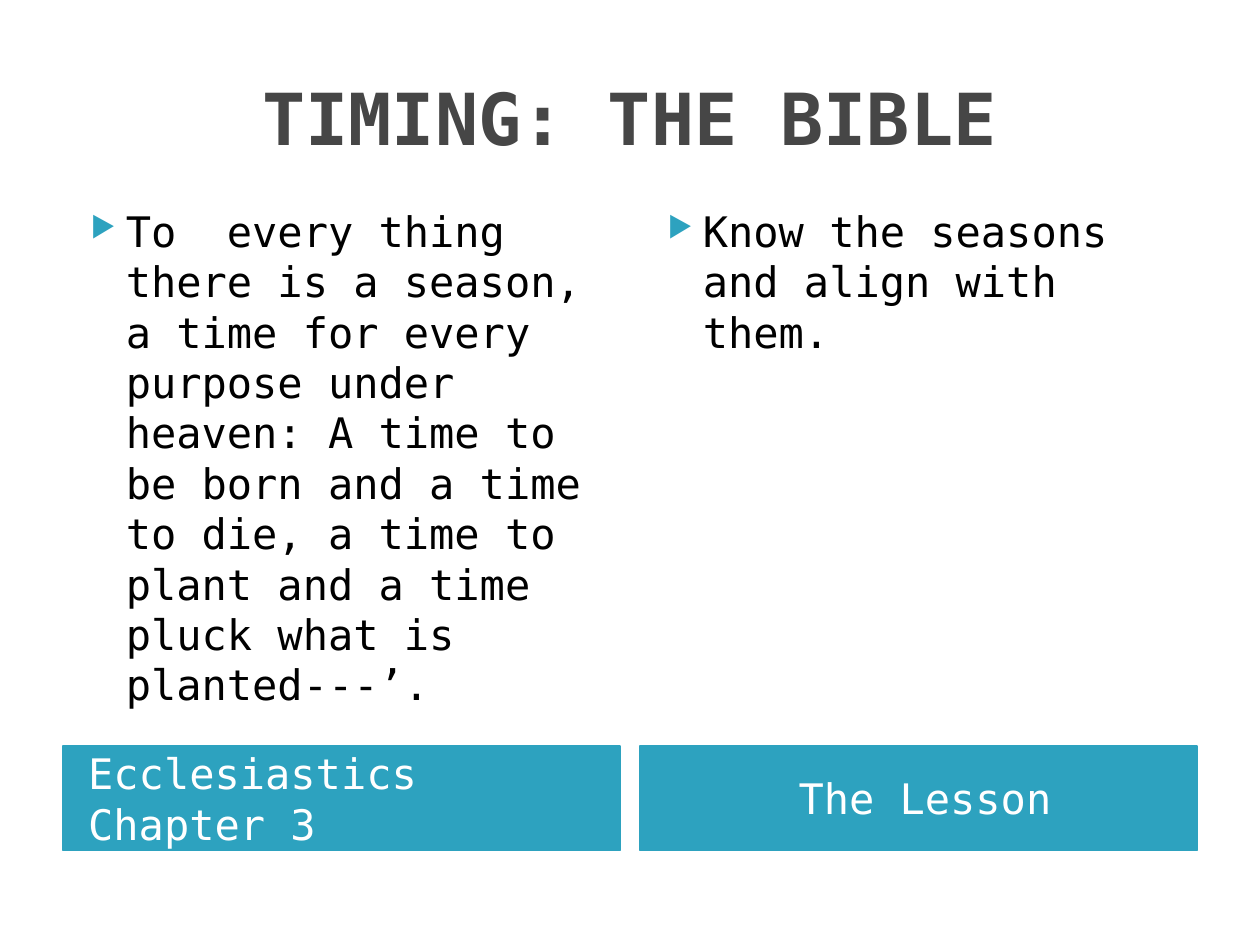
from lxml import etree
from pptx import Presentation
from pptx.dml.color import RGBColor
from pptx.enum.shapes import MSO_SHAPE
from pptx.enum.text import MSO_ANCHOR, PP_ALIGN
from pptx.oxml.ns import qn
from pptx.util import Inches, Pt

FONT = "DejaVu Sans Mono"
TEAL = RGBColor(0x2D, 0xA2, 0xBF)
GRAY = RGBColor(0x46, 0x46, 0x46)
BLACK = RGBColor(0, 0, 0)
WHITE = RGBColor(0xFF, 0xFF, 0xFF)
RECT = MSO_SHAPE.RECTANGLE
MIDDLE = MSO_ANCHOR.MIDDLE
LEFT, CENTER = PP_ALIGN.LEFT, PP_ALIGN.CENTER

MARGIN, COL_W, COL_STEP = 0.5, 4.42, 4.58
COLUMNS = [
    ("To  every thing there is a season, a time for every purpose under "
     "heaven: A time to be born and a time to die, a time to plant and a "
     "time pluck what is planted---’.", "Ecclesiastics Chapter 3", LEFT),
    ("Know the seasons and align with them.", "The Lesson", CENTER),
]


def set_text(shape, text, size, color, align=LEFT, bold=False):
    frame = shape.text_frame
    frame.word_wrap = True
    para = frame.paragraphs[0]
    para.text = text
    para.alignment = align
    font = para.font
    font.name, font.size, font.bold = FONT, Pt(size), bold
    font.color.rgb = color


def add_bullet(para):
    props = para._p.get_or_add_pPr()
    props.set("marL", str(Inches(0.4)))
    props.set("indent", str(Inches(-0.28)))
    color = etree.SubElement(props, qn("a:buClr"))
    etree.SubElement(color, qn("a:srgbClr"), val=str(TEAL))
    etree.SubElement(props, qn("a:buSzPct"), val="68000")
    etree.SubElement(props, qn("a:buChar"), char="▶")


def add_title(slide, text):
    box = slide.shapes.add_textbox(
        Inches(MARGIN), Inches(0.3), Inches(9), Inches(1.25))
    box.text_frame.vertical_anchor = MIDDLE
    set_text(box, text, 41, GRAY, CENTER, bold=True)


def add_body(slide, left, text):
    box = slide.shapes.add_textbox(
        Inches(left), Inches(1.58), Inches(COL_W), Inches(4.31))
    add_bullet(box.text_frame.paragraphs[0])
    set_text(box, text, 24, BLACK)


def add_label(slide, left, text, align):
    bar = slide.shapes.add_shape(
        RECT, Inches(left), Inches(5.92), Inches(COL_W), Inches(0.83))
    bar.shadow.inherit = False
    bar.fill.solid()
    bar.fill.fore_color.rgb = TEAL
    bar.line.color.rgb = TEAL
    bar.line.width = Pt(0.75)
    bar.text_frame.margin_left = Inches(0.2)
    bar.text_frame.vertical_anchor = MIDDLE
    set_text(bar, text, 24, WHITE, align)


def main():
    deck = Presentation()
    deck.slide_width, deck.slide_height = Inches(10), Inches(7.5)
    slide = deck.slides.add_slide(deck.slide_layouts[6])
    add_title(slide, "TIMING: THE BIBLE")
    for i, (body, label, align) in enumerate(COLUMNS):
        left = MARGIN + i * COL_STEP
        add_label(slide, left, label, align)
        add_body(slide, left, body)
    deck.save("out.pptx")


if __name__ == "__main__":
    main()
